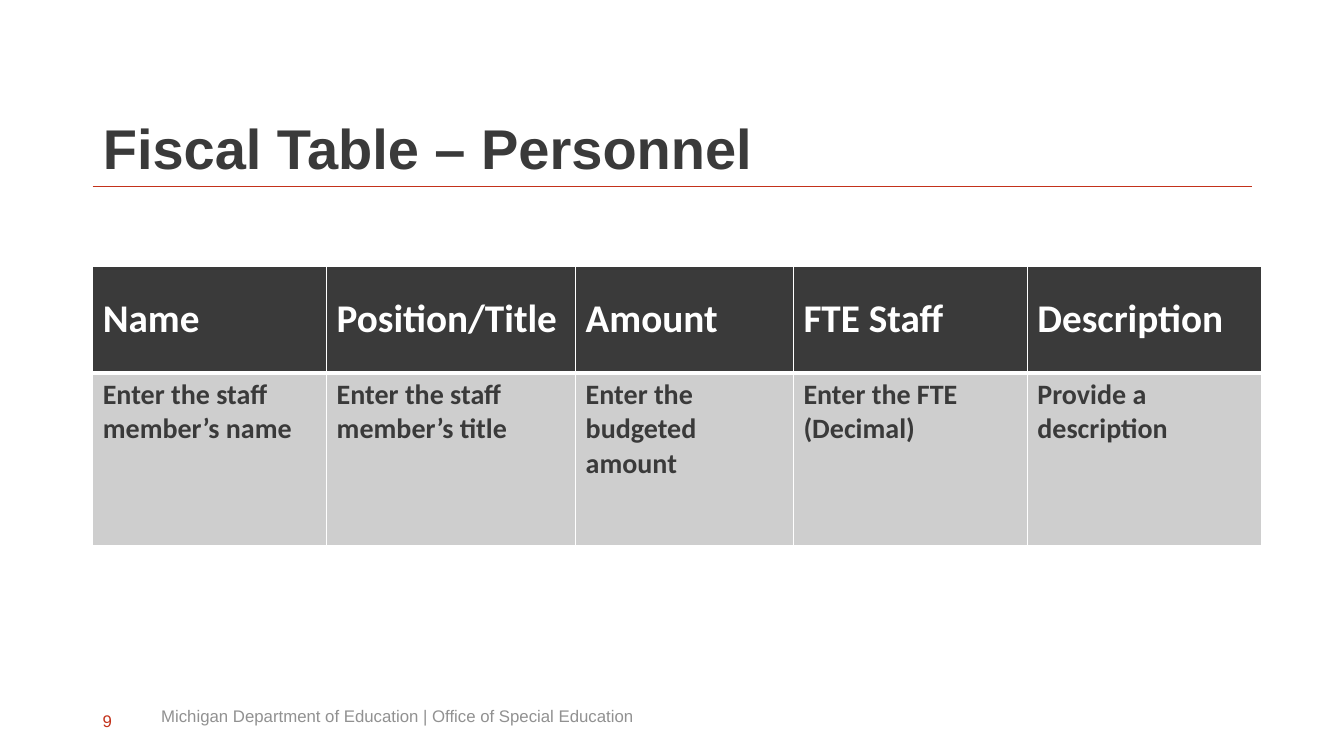
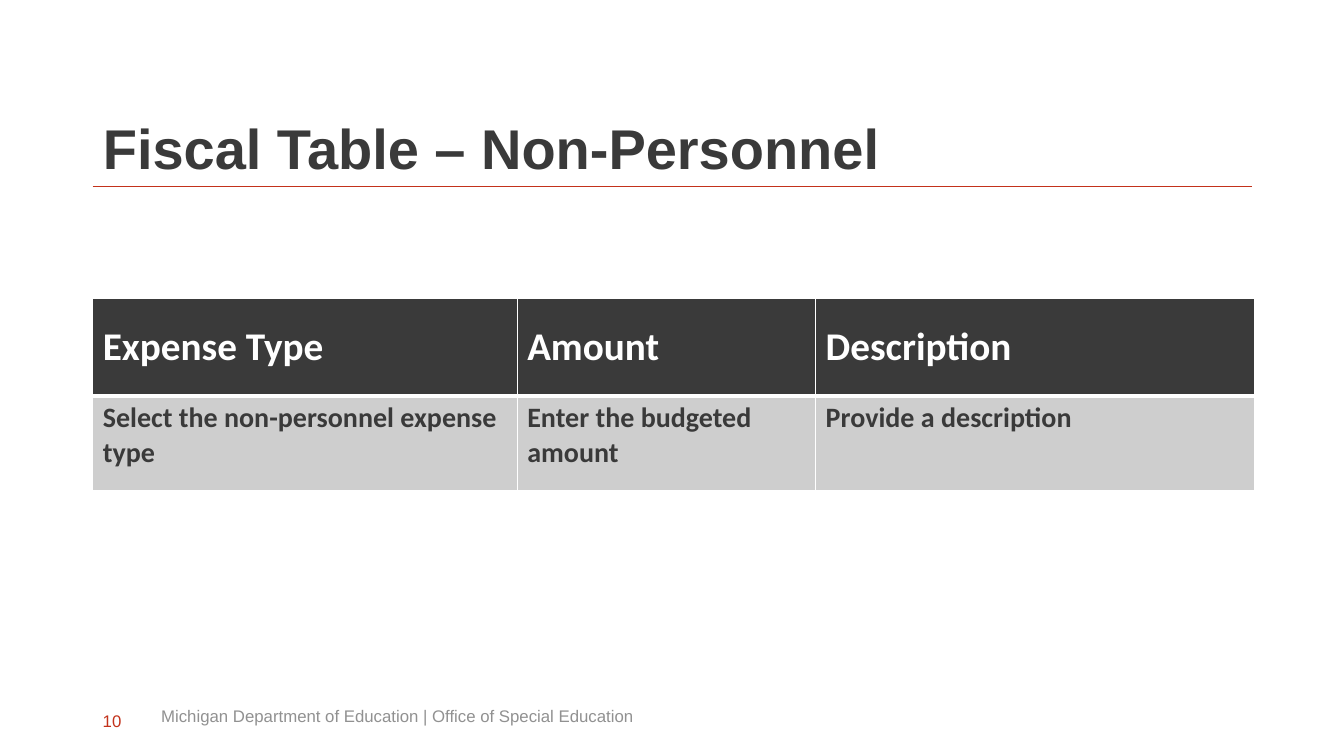
from lxml.etree import SubElement
from pptx import Presentation
from pptx.dml.color import RGBColor
from pptx.enum.shapes import MSO_CONNECTOR
from pptx.enum.text import MSO_ANCHOR as Anchor, MSO_AUTO_SIZE as AutoSize, PP_ALIGN as Align
from pptx.oxml.ns import qn
from pptx.util import Inches, Pt

DARK, RED, GRAY, LIGHT, WHITE = "3A3A3A", "C3321B", "919191", "CECECE", "FFFFFF"
LEFT = 0.92
FOOTER = "Michigan Department of Education | Office of Special Education"

SLIDES = [
    {
        "number": 9,
        "title": "Fiscal Table – Personnel",
        "top": 2.64,
        "widths": [2.32, 2.47, 2.16, 2.32, 2.32],
        "heights": [1.06, 1.71],
        "rows": [
            ["Name", "Position/Title", "Amount", "FTE Staff", "Description"],
            ["Enter the staff member’s name", "Enter the staff member’s title",
             "Enter the budgeted amount", "Enter the FTE (Decimal)", "Provide a description"],
        ],
    },
    {
        "number": 10,
        "title": "Fiscal Table – Non-Personnel",
        "top": 2.96,
        "widths": [4.21, 2.96, 4.35],
        "heights": [0.97, 0.94],
        "rows": [
            ["Expense Type", "Amount", "Description"],
            ["Select the non-personnel expense type", "Enter the budgeted amount",
             "Provide a description"],
        ],
    },
]


def rgb(value):
    return RGBColor.from_string(value)


def style(p, font, size, color, bold=False):
    p.alignment = Align.LEFT
    p.font.name, p.font.size, p.font.bold = font, Pt(size), bold
    p.font.color.rgb = rgb(color)


def add_title(slide, text):
    title = slide.shapes.title
    title.left, title.top = Inches(LEFT), Inches(0.4)
    title.width, title.height = Inches(12), Inches(1.45)
    tf = title.text_frame
    tf.text = text
    tf.auto_size = AutoSize.NONE
    tf.vertical_anchor = Anchor.BOTTOM
    p = tf.paragraphs[0]
    p.line_spacing = 0.9
    style(p, "Arial", 40, DARK, True)


def add_rule(slide):
    y = Inches(1.85)
    line = slide.shapes.add_connector(
        MSO_CONNECTOR.STRAIGHT, Inches(LEFT), y, Inches(12.42), y)
    line.line.color.rgb = rgb(RED)
    line.line.width = Pt(0.5)
    SubElement(line._element.spPr, qn("a:effectLst"))


def add_label(slide, text, left, top, width, color):
    box = slide.shapes.add_textbox(Inches(left), Inches(top), Inches(width), Inches(0.4))
    tf = box.text_frame
    tf.text = text
    tf.word_wrap = True
    tf.vertical_anchor = Anchor.MIDDLE
    style(tf.paragraphs[0], "Arial", 12, color)


def add_borders(cell, **widths):
    tc_pr = cell._tc.get_or_add_tcPr()
    for side in "LRTB":
        ln = SubElement(tc_pr, qn(f"a:ln{side}"), w=str(Pt(widths.get(side, 1))))
        fill = SubElement(ln, qn("a:solidFill"))
        SubElement(fill, qn("a:srgbClr"), val=WHITE)


def format_cell(cell, text, header):
    cell.text = text
    p = cell.text_frame.paragraphs[0]
    if header:
        add_borders(cell, B=3)
        cell.vertical_anchor = Anchor.MIDDLE
        style(p, "Calibri", 28, WHITE, True)
    else:
        add_borders(cell, T=3)
        style(p, "Calibri", 20, DARK, True)
    cell.fill.solid()
    cell.fill.fore_color.rgb = rgb(DARK if header else LIGHT)


def add_table(slide, top, widths, heights, rows):
    table = slide.shapes.add_table(
        len(rows), len(widths), Inches(LEFT), Inches(top),
        Inches(sum(widths)), Inches(sum(heights))).table
    for column, width in zip(table.columns, widths):
        column.width = Inches(width)
    for i, (height, texts) in enumerate(zip(heights, rows)):
        table.rows[i].height = Inches(height)
        for j, text in enumerate(texts):
            format_cell(table.cell(i, j), text, i == 0)


def main():
    prs = Presentation()
    prs.slide_width, prs.slide_height = Inches(13.33), Inches(7.5)
    for data in SLIDES:
        slide = prs.slides.add_slide(prs.slide_layouts[5])
        add_rule(slide)
        add_title(slide, data["title"])
        add_table(slide, data["top"], data["widths"], data["heights"], data["rows"])
        add_label(slide, str(data["number"]), LEFT, 6.95, 0.45, RED)
        add_label(slide, FOOTER, 1.5, 6.9, 8.39, GRAY)
    prs.save("out.pptx")


if __name__ == "__main__":
    main()
